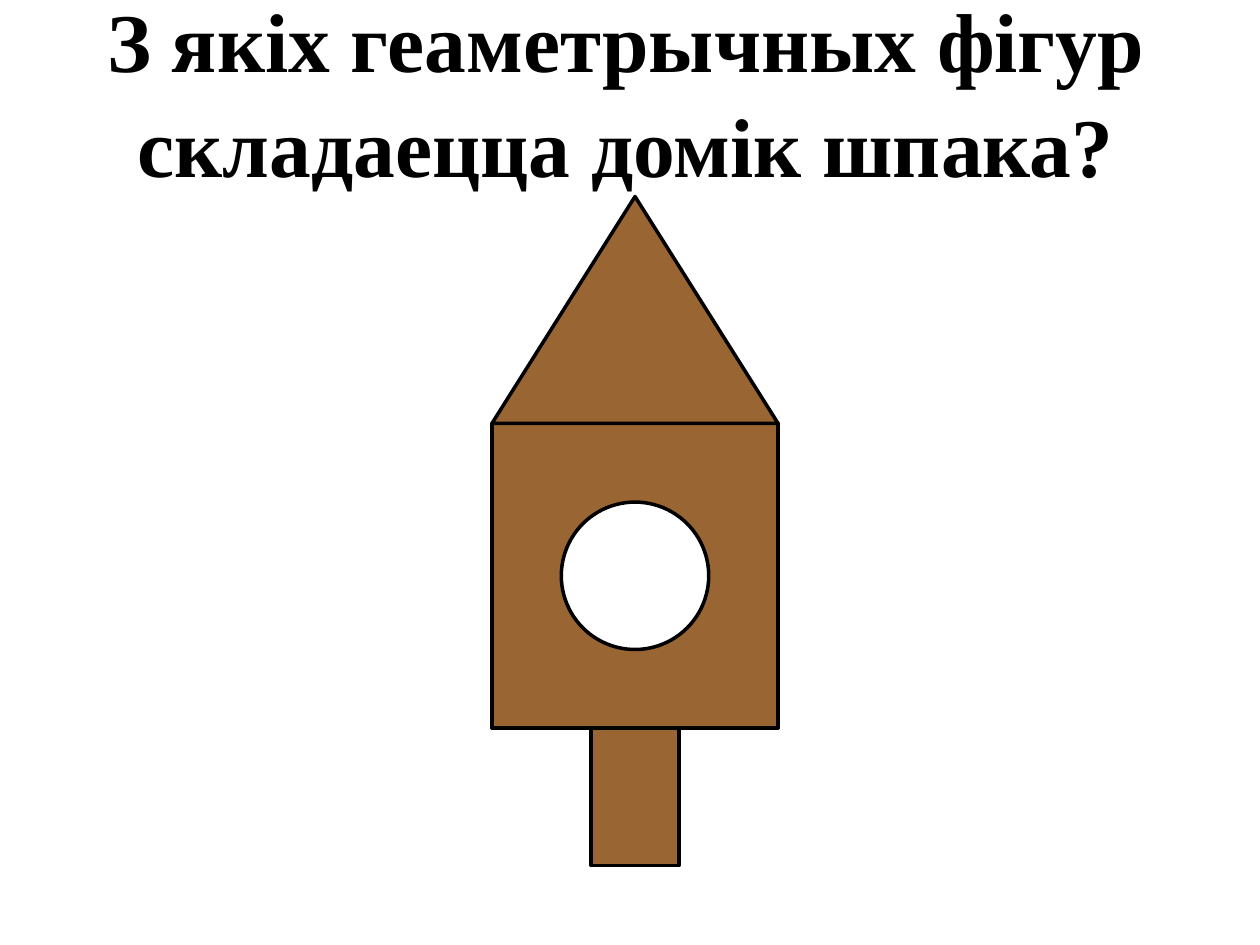
from pptx import Presentation
from pptx.dml.color import RGBColor
from pptx.enum.shapes import MSO_SHAPE
from pptx.enum.text import MSO_ANCHOR, MSO_AUTO_SIZE, PP_ALIGN
from pptx.util import Inches, Pt


def color(value):
    return RGBColor.from_string(value)


def write(frame, text, font="Times New Roman", size=18, ink="000000",
          bold=False, align=PP_ALIGN.CENTER, spacing=1.0):
    para = frame.paragraphs[0]
    para.alignment = align
    para.line_spacing = spacing
    run = para.add_run()
    run.text = text
    run.font.name = font
    run.font.size = Pt(size)
    run.font.bold = bold
    run.font.color.rgb = color(ink)


class Page:
    wood = "996633"
    ink = "000000"
    paper = "FFFFFF"
    stroke = 2

    def __init__(self, slide):
        self.slide = slide
        fill = slide.background.fill
        fill.solid()
        fill.fore_color.rgb = color(self.paper)

    def title(self, text, left, top, width, height, **style):
        box = self.slide.shapes.title
        box.left, box.top = Inches(left), Inches(top)
        box.width, box.height = Inches(width), Inches(height)
        frame = box.text_frame
        frame.word_wrap = True
        frame.auto_size = MSO_AUTO_SIZE.NONE
        frame.vertical_anchor = MSO_ANCHOR.MIDDLE
        frame.margin_bottom = Inches(0.65)  # lifts the text above the roof
        write(frame, text, ink=self.ink, **style)

    def block(self, kind, mid, top, width, height, fill=wood):
        """Add an outlined shape centred on the x position mid."""
        shape = self.slide.shapes.add_shape(
            kind, Inches(mid - width / 2), Inches(top),
            Inches(width), Inches(height))
        shape.shadow.inherit = False
        shape.fill.solid()
        shape.fill.fore_color.rgb = color(fill)
        shape.line.color.rgb = color(self.ink)
        shape.line.width = Pt(self.stroke)


def main():
    deck = Presentation()
    deck.slide_width, deck.slide_height = Inches(10), Inches(7.5)
    page = Page(deck.slides.add_slide(deck.slide_layouts[5]))
    page.title("З якіх геаметрычных фігур складаецца домік шпака?",
               0.47, 0.23, 9, 1.55, size=47.7, bold=True, spacing=1.05)

    mid, roof, wall, post = 5.04, 1.56, 3.36, 5.78
    width, hole = 2.27, 1.17
    page.block(MSO_SHAPE.RECTANGLE, mid, wall, width, post - wall)
    page.block(MSO_SHAPE.ISOSCELES_TRIANGLE, mid, roof, width, wall - roof)
    page.block(MSO_SHAPE.OVAL, mid, (wall + post - hole) / 2, hole, hole,
               fill=page.paper)
    page.block(MSO_SHAPE.RECTANGLE, mid, post, 0.7, 1.09)
    deck.save("out.pptx")


if __name__ == "__main__":
    main()
